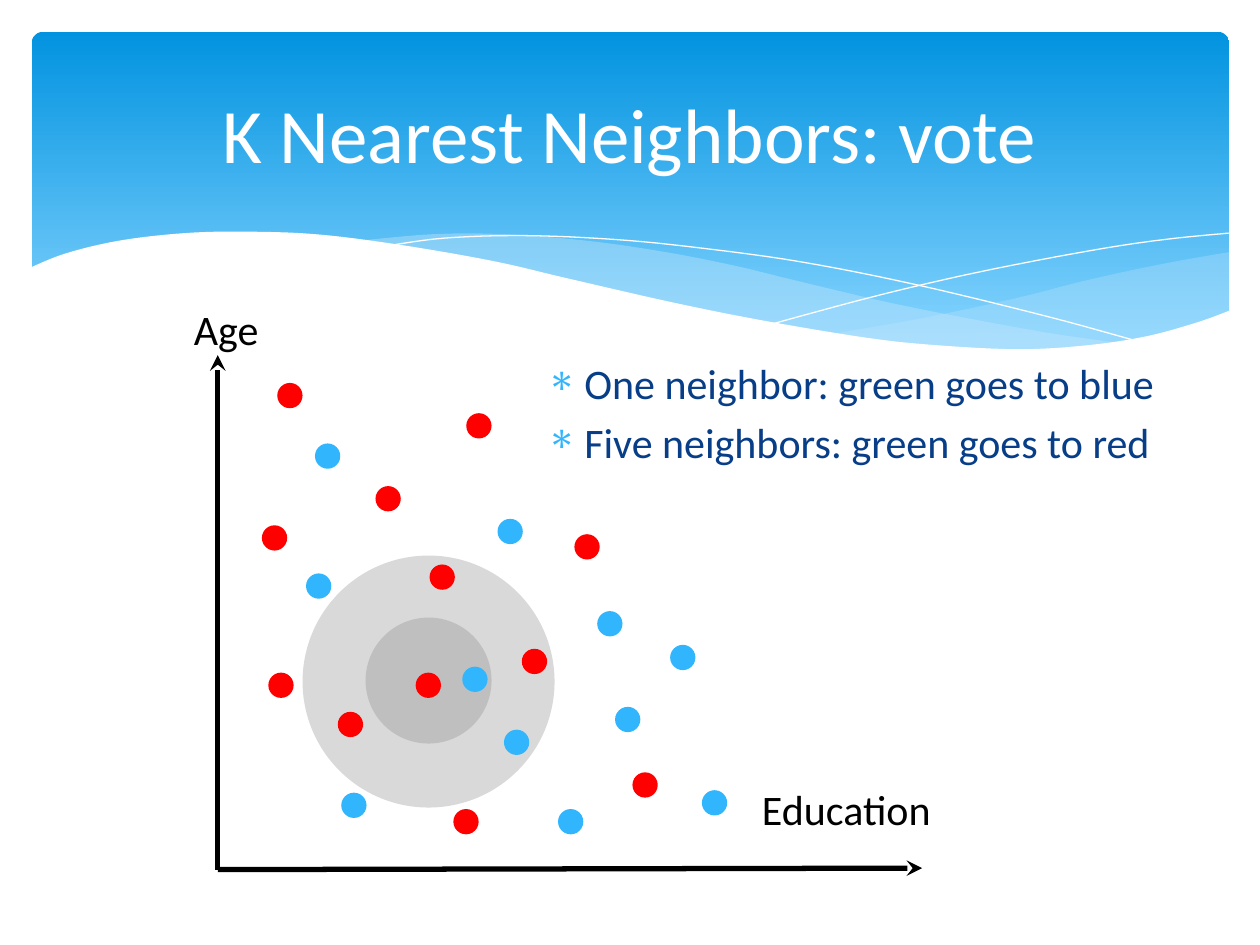
import pptx
import pptx.util
import pptx.dml.color
import pptx.enum.shapes
import pptx.enum.text
import pptx.oxml
import pptx.oxml.ns

Cm, Pt = pptx.util.Cm, pptx.util.Pt
Rgb = pptx.dml.color.RGBColor.from_string
Kind = pptx.enum.shapes.MSO_SHAPE
Align = pptx.enum.text.PP_ALIGN
Anchor = pptx.enum.text.MSO_ANCHOR
NS = 'xmlns:a="http://schemas.openxmlformats.org/drawingml/2006/main"'

theme = {
    "sky": ["0293E0", "83D3FE"], "mist": "C6E7FC", "white": "FFFFFF",
    "blue": "31B6FD", "red": "FF0000", "far": "D9D9D9", "near": "BFBFBF",
    "axis": "000000", "bullet": "31B6FD",
    "title": ({"name": "Calibri", "size": Pt(44)}, "FFFFFF"),
    "body": ({"name": "Calibri", "size": Pt(24)}, "073E87"),
    "label": ({"name": "Calibri", "size": Pt(24)}, "000000"),
}


def curve(knots, steps=6):
    """Return points on a smooth Catmull-Rom line through the knots."""
    ends = [knots[0], *knots, knots[-1]]
    pts = []
    for a, b, c, d in zip(ends, ends[1:], ends[2:], ends[3:]):
        for t in (i / steps for i in range(steps)):
            pts.append(tuple(
                (2 * q + (r - p) * t + (2 * p - 5 * q + 4 * r - s) * t ** 2
                 + (3 * q - p - 3 * r + s) * t ** 3) / 2
                for p, q, r, s in zip(a, b, c, d)))
    return pts + [knots[-1]]


def write(style, lines, left, top, width, height):
    box = slide.shapes.add_textbox(Cm(left), Cm(top), Cm(width), Cm(height))
    frame = box.text_frame
    frame.word_wrap = True
    frame.text = "\n".join(lines)
    form, color = theme[style]
    for para in frame.paragraphs:
        font = para.runs[0].font
        for key, value in form.items():
            setattr(font, key, value)
        font.color.rgb = Rgb(color)
    return frame


deck = pptx.Presentation()
deck.slide_width, deck.slide_height = Cm(25.4), Cm(19.05)
slide = deck.slides.add_slide(deck.slide_layouts[6])

# Banner
sky = slide.shapes.add_shape(Kind.ROUNDED_RECTANGLE, Cm(0.64), Cm(0.64), Cm(24.14), Cm(6.86))
sky.adjustments[0] = 0.034
sky.shadow.inherit = False
sky.line.fill.background()
sky.fill.gradient()
sky.fill.gradient_angle = 270
for stop, color, pos in zip(sky.fill.gradient_stops, theme["sky"], (0, 0.9)):
    stop.color.rgb = Rgb(color)
    stop.position = pos

# Waves under the banner: points, fill, opacity in percent (no fill: a thin line)
right = curve([(16.79, 6.73), (18.52, 6.43), (20.45, 6.02), (21.87, 5.66),
               (23.39, 5.33), (24.79, 5.08)])
right += curve([(24.79, 6.27), (23.93, 6.58), (22.61, 6.91), (20.68, 7.06),
                (18.59, 6.96), (16.79, 6.73)])
middle = curve([(7.26, 4.85), (8.74, 4.72), (10.13, 4.72), (11.81, 4.85),
                (13.41, 5.08), (14.83, 5.36), (15.98, 5.64), (17.93, 6.1),
                (19.69, 6.45), (21.26, 6.73), (22.68, 6.93)])
middle += curve([(22.68, 6.93), (21.03, 7.06), (19.33, 7.04), (17.27, 6.81),
                 (15.27, 6.48), (13.46, 6.1), (11.4, 5.64), (9.73, 5.26),
                 (8.2, 4.98), (7.26, 4.85)])
fall = curve([(7.85, 4.95), (8.97, 4.8), (10.57, 4.75), (12.42, 4.83), (14.12, 5),
              (16.15, 5.28), (18.47, 5.74), (21.11, 6.38), (23.04, 6.91)])
rise = curve([(15.57, 6.53), (17.65, 5.97), (19.71, 5.49), (22, 5.05),
              (23.47, 4.83), (24.77, 4.7)])
front = curve([(0.58, 5.41), (1.32, 5.11), (2.41, 4.85), (3.71, 4.7), (4.9, 4.67),
               (6.35, 4.72), (8.03, 4.93), (9.93, 5.26), (11.35, 5.59),
               (13.44, 6.07), (15.32, 6.45), (17.48, 6.81), (18.9, 6.96),
               (20.55, 7.04), (21.92, 6.96), (23.11, 6.78), (24.13, 6.5),
               (24.82, 6.25)])
front += [(24.82, 8.36), (0.58, 8.36)]

for pts, fill, alpha in ((right, "mist", 29), (middle, "mist", 40), (fall, None, 100),
                         (rise, None, 100), (front, "white", 100)):
    pts = [(Cm(x), Cm(y)) for x, y in pts]
    pen = slide.shapes.build_freeform(*pts[0])
    pen.add_line_segments(pts[1:], close=fill is not None)
    wave = pen.convert_to_shape()
    wave.shadow.inherit = False
    if fill is None:
        wave.fill.background()
        wave.line.color.rgb = Rgb(theme["white"])
        wave.line.width = Pt(0)
        continue
    wave.line.fill.background()
    wave.fill.solid()
    wave.fill.fore_color.rgb = Rgb(theme[fill])
    if alpha < 100:
        tint = wave.fill._xPr.find(".//" + pptx.oxml.ns.qn("a:srgbClr"))
        tint.append(pptx.oxml.parse_xml(f'<a:alpha {NS} val="{alpha * 1000}"/>'))

# Text
title = write("title", ["K Nearest Neighbors: vote"], 1.27, 0.94, 22.86, 3.48)
title.vertical_anchor = Anchor.MIDDLE
title.paragraphs[0].alignment = Align.CENTER

# Neighbourhoods and data points: left, top, size
blue = [(10.03, 10.46), (9.32, 13.44), (10.16, 14.71), (12.4, 14.25), (13.51, 13),
        (6.35, 8.94), (12.04, 12.32), (6.88, 15.98), (14.15, 15.93), (6.17, 11.56),
        (11.25, 16.31)]
red = [(6.81, 14.35), (11.58, 10.77), (5.28, 10.59), (8.66, 11.38), (9.4, 8.33),
       (12.75, 15.57), (5.59, 7.72), (10.52, 13.08), (9.14, 16.31), (7.57, 9.8),
       (5.41, 13.56), (8.38, 13.56)]
for color, size, spots in (("far", 5.08, [(6.1, 11.2)]), ("near", 2.54, [(7.37, 12.45)]),
                           ("blue", 0.51, blue), ("red", 0.51, red)):
    for x, y in spots:
        dot = slide.shapes.add_shape(Kind.OVAL, Cm(x), Cm(y), Cm(size), Cm(size))
        dot.shadow.inherit = False
        dot.line.fill.background()
        dot.fill.solid()
        dot.fill.fore_color.rgb = Rgb(theme[color])

body = write("body", ["One neighbor: green goes to blue",
                      "Five neighbors: green goes to red"], 10.77, 7.09, 14.18, 3.48)
for para in body.paragraphs:
    para.space_before = Pt(4.8)
    props = para._p.get_or_add_pPr()
    props.set("marL", str(Cm(0.76)))
    props.set("indent", str(-Cm(0.76)))
    for part in (f'<a:buClr {NS}><a:srgbClr val="{theme["bullet"]}"/></a:buClr>',
                 f'<a:buChar {NS} char="∗"/>'):
        props.append(pptx.oxml.parse_xml(part))

# Axes
for x, y in ((18.59, 17.5), (4.39, 7.16)):
    axis = slide.shapes.add_connector(pptx.enum.shapes.MSO_CONNECTOR.STRAIGHT,
                                      Cm(4.39), Cm(17.53), Cm(x), Cm(y))
    axis.line.color.rgb = Rgb(theme["axis"])
    axis.line.width = Pt(3)
    axis.line._get_or_add_ln().append(
        pptx.oxml.parse_xml(f'<a:tailEnd {NS} type="stealth"/>'))
    axis._element.spPr.append(pptx.oxml.parse_xml(f"<a:effectLst {NS}/>"))
write("label", ["Age"], 3.66, 5.99, 3.96, 1.27)
write("label", ["Education"], 15.11, 15.67, 5.51, 1.27)

deck.save("out.pptx")
